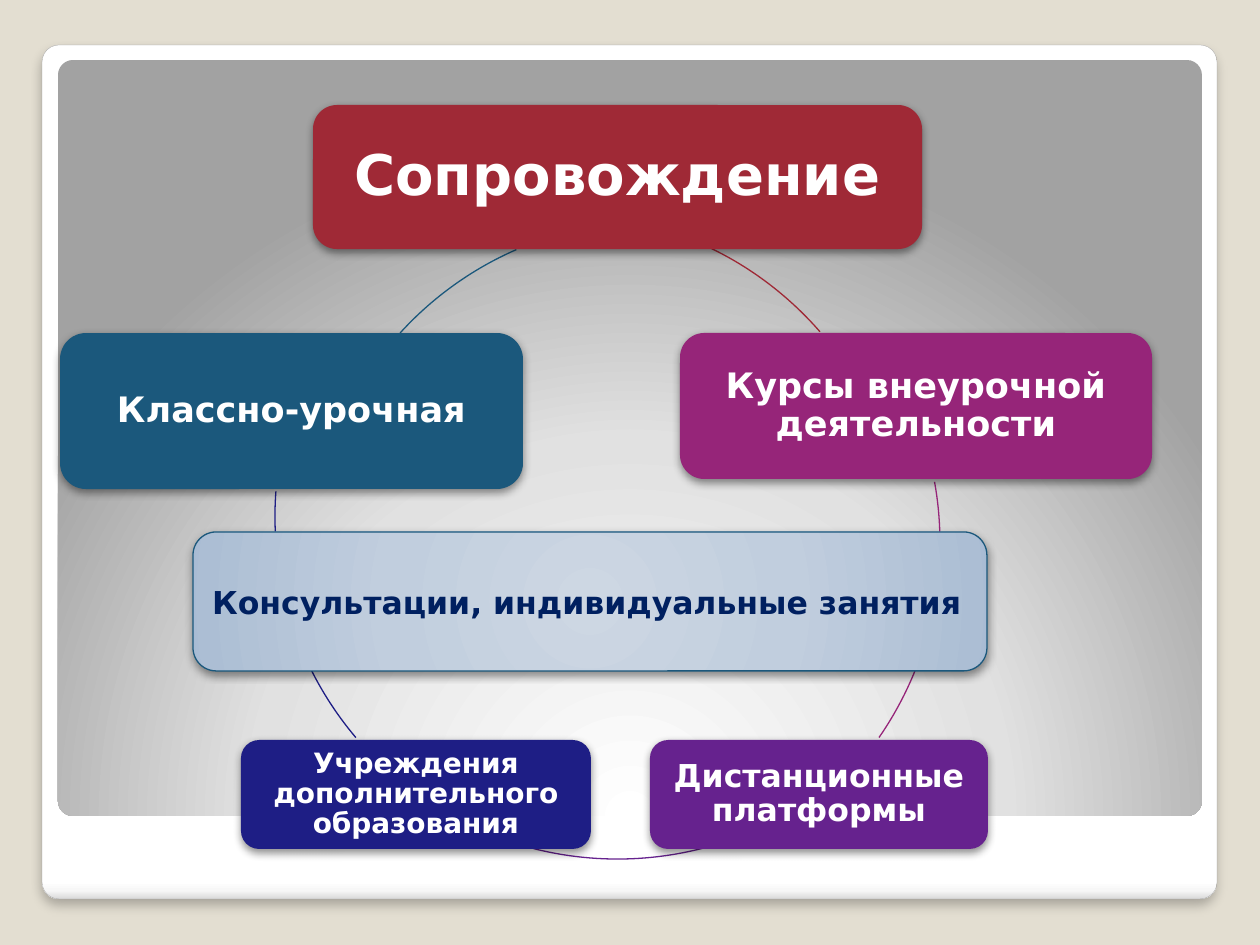
"""Build a slide showing five forms of learning support on a ring."""
from lxml import etree
from pptx import Presentation
from pptx.dml.color import RGBColor
from pptx.enum.shapes import MSO_SHAPE
from pptx.enum.text import MSO_ANCHOR, PP_ALIGN
from pptx.oxml import parse_xml
from pptx.oxml.ns import qn
from pptx.util import Emu, Pt

PX = 914400 / 126
NAMESPACE = "http://schemas.openxmlformats.org/drawingml/2006/main"
RING_SIZE = 685
COLORS = {
    "background": "E3DED1", "frame_line": "A4A4A4", "white": "FFFFFF",
    "red": "9F2936", "magenta": "962579", "violet": "66228E",
    "navy": "1E1E85", "teal": "1B587C", "dark_blue": "002060",
}
FRAME_STOPS = [(0, "FFFFFF"), (98, "FFFFFF"), (99, "F7F7F7"), (100, "DADADA")]
PANEL_STOPS = [(0, "FFFFFF"), (55, "E1E1E1"), (100, "A2A2A2")]
BAR_STOPS = [(0, "CDD7E3"), (50, "C1CEDE"), (97, "ACBED4"), (100, "A4B9D3")]
LINEAR_DOWN = '<a:lin ang="5400000" scaled="0"/>'
CIRCLE = '<a:path path="circle"><a:fillToRect l="50000" t="{}" r="50000" b="{}"/></a:path>'


def add_shape(kind, box, color=None, gradient=None, line=None, width=0.75, shadow=None):
    shape = slide.shapes.add_shape(kind, *[Emu(round(value * PX)) for value in box])
    shape.shadow.inherit = False
    if color:
        shape.fill.solid()
        shape.fill.fore_color.rgb = RGBColor.from_string(COLORS[color])
    else:
        shape.fill.background()
    if line:
        shape.line.color.rgb = RGBColor.from_string(COLORS[line])
        shape.line.width = Pt(width)
    else:
        shape.line.fill.background()
    properties = shape._element.spPr
    if gradient:
        stops, direction = gradient
        stop_xml = "".join(
            f'<a:gs pos="{position * 1000}"><a:srgbClr val="{value}"/></a:gs>'
            for position, value in stops)
        properties.replace(properties.find(qn("a:noFill")), parse_xml(
            f'<a:gradFill xmlns:a="{NAMESPACE}" rotWithShape="1">'
            f"<a:gsLst>{stop_xml}</a:gsLst>{direction}</a:gradFill>"))
    if shadow:
        opacity, blur, distance = shadow
        outer = etree.SubElement(
            properties.find(qn("a:effectLst")), qn("a:outerShdw"),
            blurRad=str(Pt(blur)), dist=str(Pt(distance)), dir="5400000",
            algn="ctr", rotWithShape="0")
        shade = etree.SubElement(outer, qn("a:srgbClr"), val="000000")
        etree.SubElement(shade, qn("a:alpha"), val=str(opacity * 1000))
    return shape


def add_label(shape, text, size, color):
    frame = shape.text_frame
    frame.word_wrap = True
    frame.vertical_anchor = MSO_ANCHOR.MIDDLE
    paragraph = frame.paragraphs[0]
    paragraph.text = text
    paragraph.alignment = PP_ALIGN.LEFT
    paragraph.font.name = "DejaVu Sans"
    paragraph.font.size = Pt(size)
    paragraph.font.bold = True
    paragraph.font.color.rgb = RGBColor.from_string(COLORS[color])
    return frame


presentation = Presentation()
presentation.slide_width = Emu(round(1260 * PX))
presentation.slide_height = Emu(round(945 * PX))
slide = presentation.slides.add_slide(presentation.slide_layouts[6])
slide.background.fill.solid()
slide.background.fill.fore_color.rgb = RGBColor.from_string(COLORS["background"])

frame_card = add_shape(
    MSO_SHAPE.ROUNDED_RECTANGLE, (42, 45, 1175, 854), gradient=(FRAME_STOPS, LINEAR_DOWN),
    line="frame_line", width=0.16, shadow=(25, 6, 4))
panel = add_shape(
    MSO_SHAPE.ROUNDED_RECTANGLE, (58, 60, 1144, 756),
    gradient=(PANEL_STOPS, CIRCLE.format(175000, -75000)))
for card in (frame_card, panel):
    card.adjustments[0] = 0.02

arcs = [
    (219, 214, 296, 319, "red"),
    (255, 200, 349.8, 34.7, "magenta"),
    (275, 174, 75.6, 104.2, "violet"),
    (275, 174, 139.8, 184.2, "navy"),
    (311, 221, 222.3, 246.4, "teal"),
]
for left, top, start, end, color in arcs:
    arc = add_shape(MSO_SHAPE.ARC, (left, top, RING_SIZE, RING_SIZE), line=color)
    for index, degrees in enumerate((start, end)):
        arc.adjustments[index] = degrees * 0.6

boxes = [
    ("Сопровождение", (313, 105, 609, 144), "red", 32, 16),
    ("Курсы внеурочной деятельности", (680, 333, 472, 146), "magenta", 20, 10),
    ("Дистанционные платформы", (650, 740, 338, 109), "violet", 18, 9),
    ("Учреждения дополнительного образования", (241, 740, 350, 109), "navy", 16, 9),
    ("Классно-урочная", (60, 333, 463, 156), "teal", 20, 10),
]
for text, place, color, size, inset in boxes:
    box = add_shape(MSO_SHAPE.ROUNDED_RECTANGLE, place, color=color, shadow=(43, 5, 2))
    label = add_label(box, text, size, "white")
    label.margin_left = label.margin_right = Emu(round(inset * PX))
    label.margin_top = label.margin_bottom = Emu(round(inset * PX))
    label.paragraphs[0].alignment = PP_ALIGN.CENTER
    label.paragraphs[0].line_spacing = 0.9

consultations = add_shape(
    MSO_SHAPE.ROUNDED_RECTANGLE, (193, 532, 794, 139),
    gradient=(BAR_STOPS, CIRCLE.format(50000, 50000)), line="teal", shadow=(43, 5, 2))
add_label(consultations, "Консультации, индивидуальные занятия", 18, "dark_blue")

presentation.save("out.pptx")
